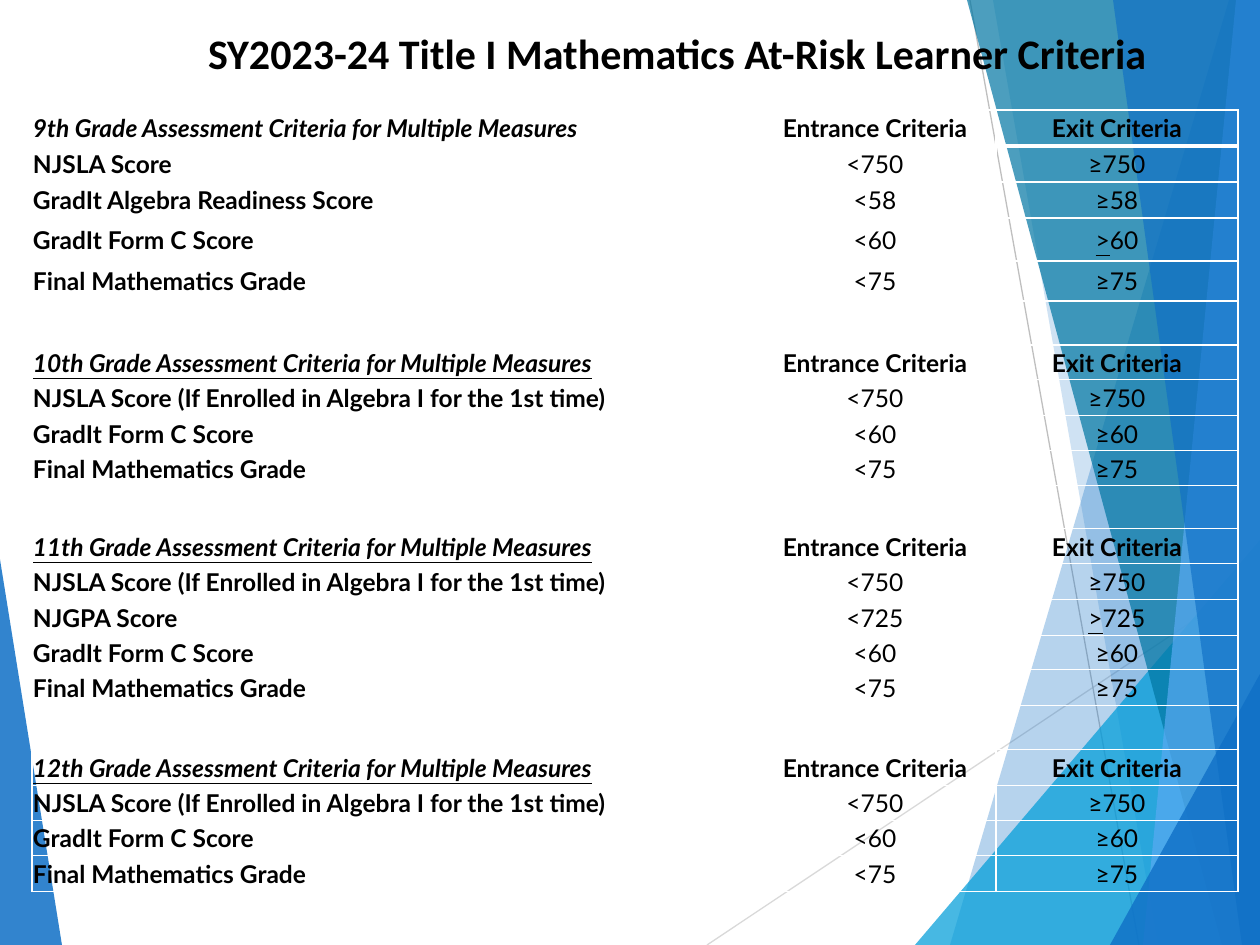
from dataclasses import dataclass

import lxml.etree
import pptx
import pptx.dml.color
import pptx.enum.shapes
import pptx.enum.text
import pptx.oxml.ns
import pptx.util

SCALE = 914400 / 126
WIDTH, HEIGHT = 1260, 945
COLORS = {
    "blue": "0F6FC6",
    "cyan": "009DD9",
    "teal": "0076A3",
    "sky": "59AAF2",
    "light_gray": "D9D9D9",
    "gray": "BFBFBF",
    "white": "FFFFFF",
    "black": "000000",
}
Point = tuple[int, int]


@dataclass
class Facet:
    color: str
    opacity: int
    points: list[Point]


@dataclass
class Ray:
    color: str
    start: Point
    end: Point


@dataclass
class Measure:
    name: str
    entrance: str
    exit: str


@dataclass
class Section:
    grade: str
    measures: list[Measure]


LEFT_FACET = Facet("blue", 85, [(-1, 553), (62, HEIGHT), (-1, HEIGHT)])
RAYS = [
    Ray("light_gray", (707, HEIGHT), (WIDTH, 576)),
    Ray("gray", (970, 0), (1139, HEIGHT)),
]
RIGHT_FACETS = [
    Facet(color, opacity, [top, (bottom, HEIGHT), (WIDTH, HEIGHT), (WIDTH, top[1])])
    for color, opacity, top, bottom in [
        ("blue", 30, (1229, 0), 950),
        ("blue", 20, (993, 0), 1158),
        ("cyan", 72, (WIDTH, 540), 915),
        ("teal", 70, (967, 0), 1222),
        ("sky", 70, (1236, 0), 1143),
        ("blue", 65, (1113, 0), 1242),
        ("blue", 80, (WIDTH, 674), 1110),
    ]
]

STATE_TEST = Measure("NJSLA Score", "<750", "≥750")
ALGEBRA_TEST = Measure(
    "NJSLA Score (If Enrolled in Algebra I for the 1st time)", "<750", "≥750"
)
FORM_C = Measure("GradIt Form C Score", "<60", "≥60")
FINAL_GRADE = Measure("Final Mathematics Grade", "<75", "≥75")
SECTIONS = [
    Section("9th", [
        STATE_TEST,
        Measure("GradIt Algebra Readiness Score", "<58", "≥58"),
        Measure("GradIt Form C Score", "<60", ">60"),
        FINAL_GRADE,
    ]),
    Section("10th", [ALGEBRA_TEST, FORM_C, FINAL_GRADE]),
    Section("11th", [
        ALGEBRA_TEST, Measure("NJGPA Score", "<725", ">725"), FORM_C, FINAL_GRADE,
    ]),
    Section("12th", [ALGEBRA_TEST, FORM_C, FINAL_GRADE]),
]
COLUMN_WIDTHS = [722, 242, 242]
ROW_HEIGHTS = [36, 36, 36, 43, 40, 44, 35, 36, 35, 35, 43,
               35, 36, 36, 34, 36, 44, 36, 35, 35, 36]


def px(length: int) -> pptx.util.Emu:
    return pptx.util.Emu(round(length * SCALE))


def rgb(name: str) -> pptx.dml.color.RGBColor:
    return pptx.dml.color.RGBColor.from_string(COLORS[name])


def add_element(parent, tag: str, **attributes: str):
    element = lxml.etree.SubElement(parent, pptx.oxml.ns.qn(tag))
    for key, value in attributes.items():
        element.set(key, value)
    return element


def draw_facet(slide, facet: Facet) -> None:
    builder = slide.shapes.build_freeform(*facet.points[0], scale=SCALE)
    builder.add_line_segments(facet.points[1:], close=True)
    shape = builder.convert_to_shape()
    shape.shadow.inherit = False
    shape.line.fill.background()
    shape.fill.solid()
    shape.fill.fore_color.rgb = rgb(facet.color)
    color = shape.fill._xPr.find(".//" + pptx.oxml.ns.qn("a:srgbClr"))
    add_element(color, "a:alpha", val=str(facet.opacity * 1000))


def draw_ray(slide, ray: Ray) -> None:
    connector = slide.shapes.add_connector(
        pptx.enum.shapes.MSO_CONNECTOR.STRAIGHT,
        *map(px, ray.start), *map(px, ray.end),
    )
    connector.line.color.rgb = rgb(ray.color)
    connector.line.width = pptx.util.Pt(0.75)
    add_element(connector._element.spPr, "a:effectLst")


def style_font(font, name: str, size: int, bold: bool) -> None:
    font.name = name
    font.size = pptx.util.Pt(size)
    font.bold = bold
    font.color.rgb = rgb("black")


def draw_title(slide) -> None:
    box = slide.shapes.add_textbox(px(147), px(21), px(1061), px(178))
    box.text_frame.word_wrap = True
    paragraph = box.text_frame.paragraphs[0]
    paragraph.text = "SY2023-24 Title I Mathematics At-Risk Learner Criteria"
    paragraph.alignment = pptx.enum.text.PP_ALIGN.CENTER
    style_font(paragraph.font, "Calibri", 24, True)


def set_borders(cell, top: int, bottom: int) -> None:
    properties = cell._tc.get_or_add_tcPr()
    for side, points in [("L", 1), ("R", 1), ("T", top), ("B", bottom)]:
        line = add_element(properties, f"a:ln{side}", w=str(pptx.util.Pt(points)))
        fill = add_element(line, "a:solidFill")
        add_element(fill, "a:srgbClr", val=COLORS["white"])


def fill_cell(cell, text: str, column: int, is_header: bool) -> None:
    cell.margin_left = cell.margin_right = cell.margin_top = px(1)
    cell.margin_bottom = 0
    cell.vertical_anchor = pptx.enum.text.MSO_ANCHOR.MIDDLE
    paragraph = cell.text_frame.paragraphs[0]
    style_font(paragraph.font, "Lato", 14, is_header or column == 0)
    if column > 0:
        paragraph.alignment = pptx.enum.text.PP_ALIGN.CENTER
    elif is_header:
        paragraph.font.italic = True
        paragraph.font.underline = True
    if text.startswith(">"):
        sign = paragraph.add_run()
        sign.text = ">"
        sign.font.underline = True
        text = text[1:]
    if text:
        paragraph.add_run().text = text


def table_rows() -> list[tuple[bool, tuple[str, str, str]]]:
    rows = []
    for section in SECTIONS:
        if rows:
            rows.append((False, ("", "", "")))
        heading = f"{section.grade} Grade Assessment Criteria for Multiple Measures"
        rows.append((True, (heading, "Entrance Criteria", "Exit Criteria")))
        rows += [(False, (m.name, m.entrance, m.exit)) for m in section.measures]
    return rows


def draw_table(slide) -> None:
    table = slide.shapes.add_table(
        len(ROW_HEIGHTS), len(COLUMN_WIDTHS), px(32), px(110),
        px(sum(COLUMN_WIDTHS)), px(sum(ROW_HEIGHTS)),
    ).table
    table.first_row = table.horz_banding = False
    for column, width in zip(table.columns, COLUMN_WIDTHS):
        column.width = px(width)
    for row_index, (is_header, texts) in enumerate(table_rows()):
        table.rows[row_index].height = px(ROW_HEIGHTS[row_index])
        for column_index, text in enumerate(texts):
            cell = table.cell(row_index, column_index)
            fill_cell(cell, text, column_index, is_header)
            set_borders(cell, 3 if row_index == 1 else 1, 3 if row_index == 0 else 1)
            cell.fill.background()


def main() -> None:
    presentation = pptx.Presentation()
    presentation.slide_width, presentation.slide_height = px(WIDTH), px(HEIGHT)
    slide = presentation.slides.add_slide(presentation.slide_layouts[6])
    draw_facet(slide, LEFT_FACET)
    for ray in RAYS:
        draw_ray(slide, ray)
    for facet in RIGHT_FACETS:
        draw_facet(slide, facet)
    draw_title(slide)
    draw_table(slide)
    presentation.save("out.pptx")


if __name__ == "__main__":
    main()
